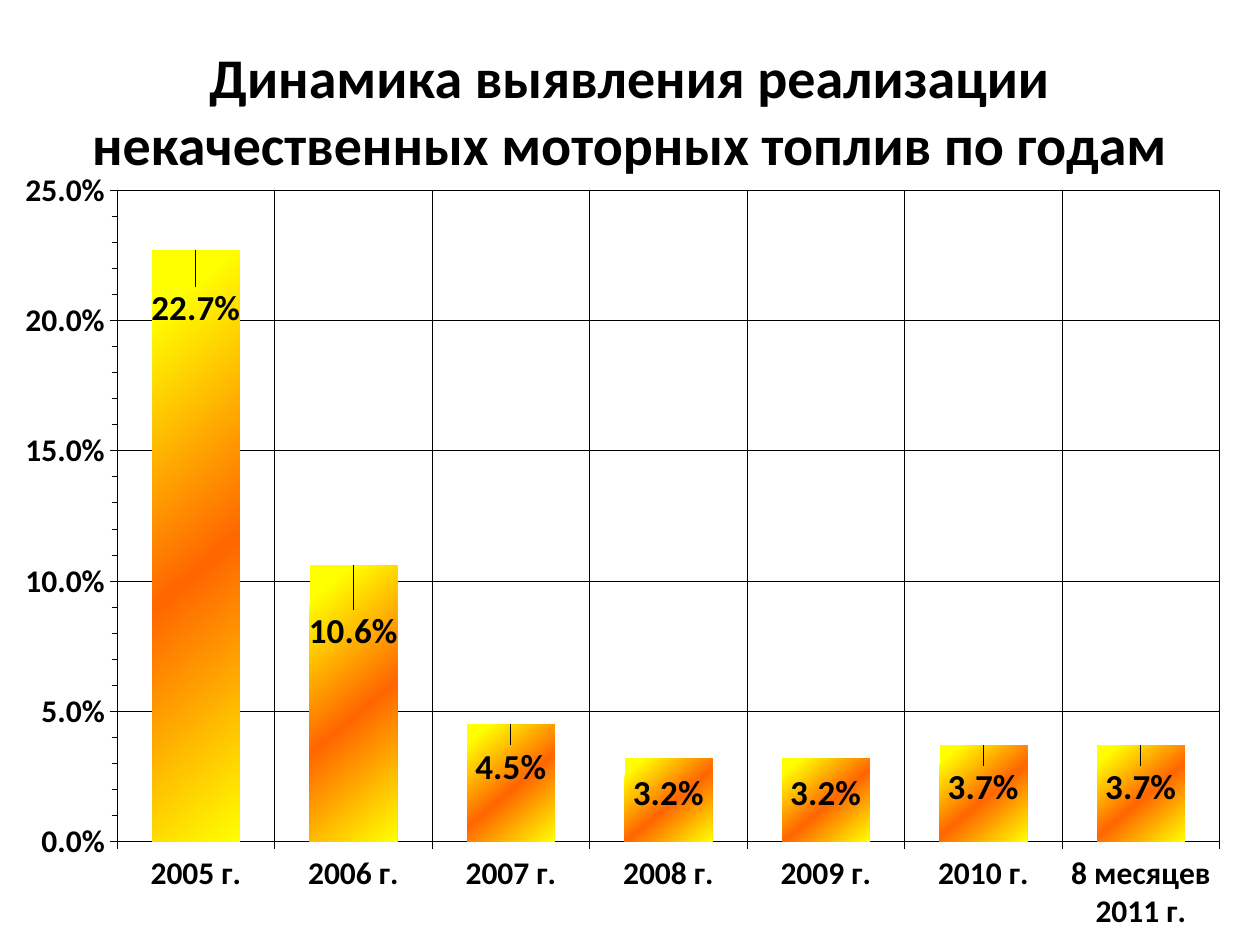
from copy import deepcopy

from lxml import etree
from pptx import Presentation
from pptx import util as u
from pptx.chart.data import CategoryChartData
from pptx.dml.color import RGBColor
from pptx.enum import chart as ch, text
from pptx.oxml.ns import qn

COLORS = {"ink": "000000", "edge": "FFFF00", "core": "FF6600"}
FONT = "Calibri"
WIDTH, HEIGHT = u.Inches(10), u.Inches(7.5)
YEARS = [f"{year} г." for year in range(2005, 2011)] + ["8 месяцев 2011 г."]
SHARES = [0.227, 0.106, 0.045, 0.032, 0.032, 0.037, 0.037]
LABEL_DROPS = [0.04, 0.05, 0.02, 0.01, 0.01, 0.02, 0.02]


def color(name):
    return RGBColor.from_string(COLORS[name])


def style_font(font, size):
    font.name, font.size, font.bold = FONT, u.Pt(size), True
    font.color.rgb = color("ink")


def write_text(frame, content, size=18, align=text.PP_ALIGN.CENTER):
    frame.word_wrap = True
    frame.auto_size = text.MSO_AUTO_SIZE.SHAPE_TO_FIT_TEXT
    frame.vertical_anchor = text.MSO_ANCHOR.MIDDLE
    paragraph = frame.paragraphs[0]
    paragraph.alignment = align
    run = paragraph.add_run()
    run.text = content
    style_font(run.font, size)


def add_layout(parent, index, **settings):
    layout = etree.Element(qn("c:layout"))
    manual = etree.SubElement(layout, qn("c:manualLayout"))
    for tag, value in settings.items():
        etree.SubElement(manual, qn(f"c:{tag}")).set("val", str(value))
    for old in parent.findall(qn("c:layout")):
        parent.remove(old)
    parent.insert(index, layout)


def style_axis(axis):
    axis.has_major_gridlines = True
    axis.major_tick_mark = ch.XL_TICK_MARK.CROSS
    for line in (axis.format.line, axis.major_gridlines.format.line):
        line.color.rgb = color("ink")
        line.width = u.Pt(0.39)
    style_font(axis.tick_labels.font, 18)


def fill_bars(fill):
    fill.gradient()
    fill.gradient_angle = 310
    first = fill.gradient_stops[0]._gs
    first.addnext(deepcopy(first))
    for stop, (position, name) in zip(
        fill.gradient_stops, [(0.1, "edge"), (0.54, "core"), (1, "edge")]
    ):
        stop.position = position
        stop.color.rgb = color(name)


def label_bars(series):
    for index, drop in enumerate(LABEL_DROPS):
        label = series.points[index].data_label
        style_font(label.font, 20)
        label.position = ch.XL_LABEL_POSITION.INSIDE_END
    for drop, element in zip(LABEL_DROPS, series._element.iter(qn("c:dLbl"))):
        add_layout(element, 1, x=0, y=drop)


def place_title(title, left, top, width, height):
    title.left, title.top, title.width, title.height = left, top, width, height
    write_text(
        title.text_frame,
        "Динамика выявления реализации некачественных моторных топлив по годам",
        size=32,
    )


def place_chart(slide, left, top, width, height):
    data = CategoryChartData(number_format="0.0%")
    data.categories = YEARS
    data.add_series("Series 1", SHARES)
    chart = slide.shapes.add_chart(
        ch.XL_CHART_TYPE.COLUMN_CLUSTERED, left, top, width, height, data
    ).chart
    chart.has_legend = chart.has_title = False
    style_font(chart.font, 18)

    years, shares = chart.category_axis, chart.value_axis
    style_axis(years)
    style_axis(shares)
    years.tick_label_position = ch.XL_TICK_LABEL_POSITION.LOW
    shares.minimum_scale, shares.maximum_scale = 0, 0.25
    shares.major_unit, shares.minor_unit = 0.05, 0.01
    shares.minor_tick_mark = ch.XL_TICK_MARK.OUTSIDE
    shares.tick_labels.number_format = "0.0%"
    shares.tick_labels.number_format_is_linked = False

    plot = chart.plots[0]
    plot.gap_width = 80
    plot.vary_by_categories = False
    fill_bars(plot.series[0].format.fill)
    label_bars(plot.series[0])

    area = chart._chartSpace.chart.plotArea
    add_layout(
        area, 0, layoutTarget="inner", xMode="edge", yMode="edge",
        x=u.Inches(0.93) / width, y=u.Inches(0.28) / height,
        w=u.Inches(8.75) / width, h=u.Inches(5.17) / height,
    )


def main():
    deck = Presentation()
    deck.slide_width, deck.slide_height = WIDTH, HEIGHT
    slide = deck.slides.add_slide(deck.slide_layouts[5])
    place_title(slide.shapes.title, 0, u.Inches(0.28), WIDTH, u.Inches(1.18))
    place_chart(slide, 0, u.Inches(1.23), u.Inches(9.86), HEIGHT - u.Inches(1.23))
    deck.save("out.pptx")


if __name__ == "__main__":
    main()
